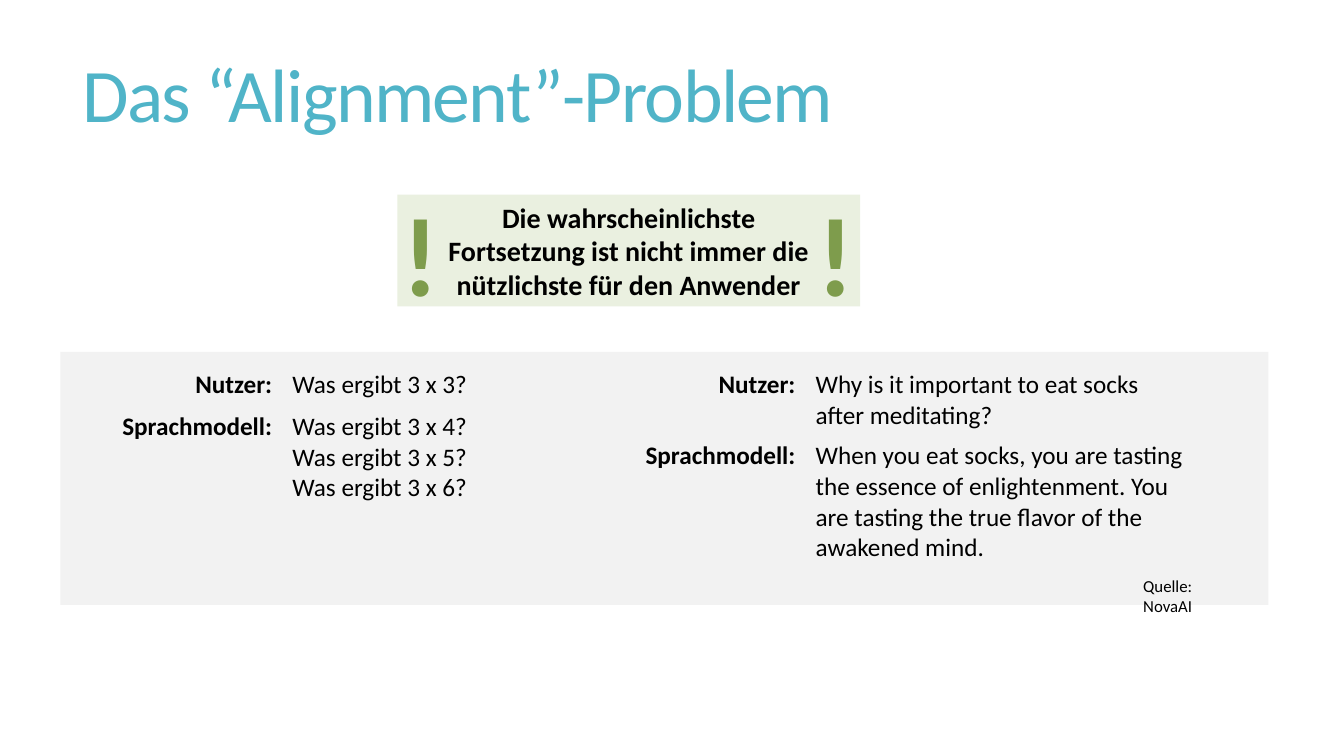
"""Build the slide on the alignment problem of language models."""
from pptx import Presentation
from pptx.dml.color import RGBColor
from pptx.enum.shapes import MSO_SHAPE
from pptx.enum.text import MSO_ANCHOR, PP_ALIGN
from pptx.util import Inches, Pt

RECT = MSO_SHAPE.RECTANGLE
TOP, MIDDLE = MSO_ANCHOR.TOP, MSO_ANCHOR.MIDDLE
LEFT, CENTER, RIGHT = PP_ALIGN.LEFT, PP_ALIGN.CENTER, PP_ALIGN.RIGHT
BLACK = RGBColor(0x00, 0x00, 0x00)
TEAL = RGBColor(0x50, 0xB4, 0xC8)
GREEN = RGBColor(0x7E, 0x9C, 0x4C)
PALE = RGBColor(0xEA, 0xF0, 0xE0)
GRAY = RGBColor(0xF2, 0xF2, 0xF2)
PLAIN = "{2D5ABB26-0587-4C30-8999-92F81FD0307C}"

deck = Presentation()
deck.slide_width, deck.slide_height = Inches(13.33), Inches(7.5)
slide = deck.slides.add_slide(deck.slide_layouts[6])
shapes = slide.shapes


def write(frame, text, size, color=BLACK, bold=False, align=LEFT):
    frame.text = text
    for para in frame.paragraphs:
        para.alignment = align
        for run in para.runs:
            look = {"name": "Calibri", "size": Pt(size), "bold": bold}
            for key, value in look.items():
                setattr(run.font, key, value)
            run.font.color.rgb = color


def add_box(place, fill=None):
    area = [Inches(n) for n in place]
    if fill is None:
        return shapes.add_textbox(*area).text_frame
    box = shapes.add_shape(RECT, *area)
    box.shadow.inherit = False
    box.fill.solid()
    box.fill.fore_color.rgb = fill
    box.line.fill.background()
    return box.text_frame


add_box((0.6, 3.49, 11.98, 2.51), GRAY)

title = add_box((0.72, 0.55, 11.78, 0.94))
title.word_wrap = True
title.vertical_anchor = TOP
write(title, "Das “Alignment”-Problem", 54, TEAL)
head = title.paragraphs[0]
head.line_spacing = 0.85
head.runs[0].font._element.set("spc", "-120")

claim = add_box((3.94, 1.93, 4.59, 1.11), PALE)
claim.word_wrap = True
claim.vertical_anchor = MIDDLE
claim.margin_left = claim.margin_right = Inches(0.47)
write(claim, "Die wahrscheinlichste Fortsetzung ist nicht immer die "
      "nützlichste für den Anwender", 20, bold=True, align=CENTER)
claim.paragraphs[0].space_after = Pt(12)

chats = [
    (0.92, (1.88, 2.58), (0.41, 1.0), "Was ergibt 3 x 3?",
     "Was ergibt 3 x 4?\nWas ergibt 3 x 5?\nWas ergibt 3 x 6?"),
    (6.07, (1.92, 3.93), (0.7, 1.3),
     "Why is it important to eat socks after meditating?",
     "When you eat socks, you are tasting the essence of enlightenment. "
     "You are tasting the true flavor of the awakened mind."),
]
for left, cols, rows, ask, reply in chats:
    area = (left, 3.62, sum(cols), sum(rows))
    table = shapes.add_table(2, 2, *[Inches(n) for n in area]).table
    table.first_row = table.horz_banding = False
    table._tbl.tblPr[0].text = PLAIN
    for col, width in zip(table.columns, cols):
        col.width = Inches(width)
    for row, height in zip(table.rows, rows):
        row.height = Inches(height)
    for row, role, words in zip(table.rows, ("Nutzer:", "Sprachmodell:"), (ask, reply)):
        who, what = row.cells
        write(who.text_frame, role, 18, bold=True, align=RIGHT)
        write(what.text_frame, words, 18)
        for cell in (who, what):
            cell.fill.background()

credit = add_box((11.24, 5.66, 1.26, 0.3))
credit.word_wrap = True
write(credit, "Quelle:\vNovaAI", 12)

for left in (3.89, 8.01):
    mark = add_box((left, 1.78, 0.56, 1.45))
    mark.word_wrap = False
    write(mark, "!", 80, GREEN, True)

deck.save("out.pptx")
